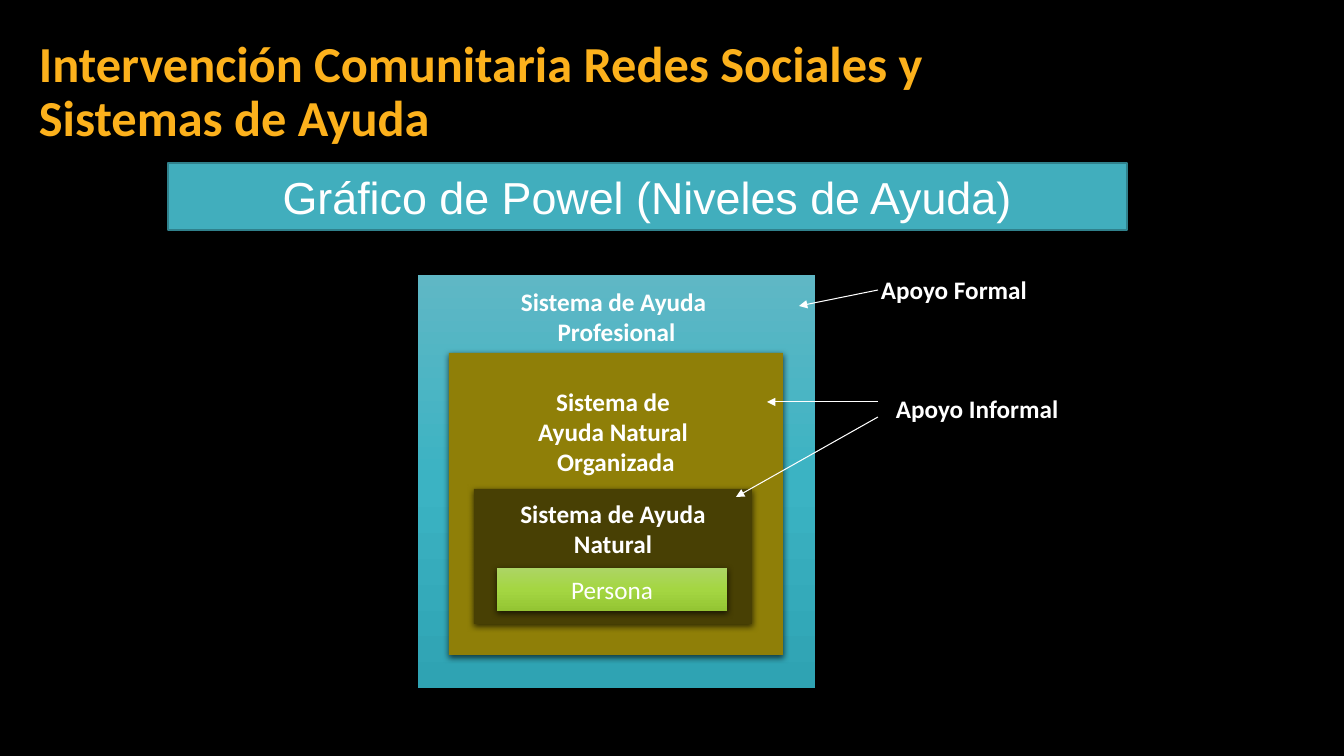
from copy import deepcopy

from lxml import etree
from pptx import Presentation, util as u
from pptx.dml.color import RGBColor
from pptx.enum import shapes, text
from pptx.oxml import ns

PX = 914400 / 100.8
COLORS = {
    "black": "000000", "white": "FFFFFF", "amber": "FCB11C",
    "teal": "41AEBD", "teal_edge": "30818C", "olive": "8F7F08", "dark_olive": "484004",
}
TEAL_GRADIENT = ["5FB7C5", "3BB3C3", "2FA3B3"]
GREEN_GRADIENT = ["ACD564", "A4D642", "94C533"]

# Content: boxes are left, top, width, height in px
TITLE = ("Intervención Comunitaria Redes Sociales y Sistemas de Ayuda", (29, 30, 1072, 126))
BANNER = ("Gráfico de Powel (Niveles de Ayuda)", (168, 163, 959, 67))
# Nested levels, outermost first: lines, box, fill, space above text, bold
LEVELS = [
    (["Sistema de Ayuda ", "Profesional"], (418, 275, 397, 413), TEAL_GRADIENT, 11, True),
    (["Sistema de ", "Ayuda Natural ", "Organizada"], (449, 353, 334, 302),
     COLORS["olive"], 33, True),
    (["Sistema de Ayuda", "Natural"], (474, 489, 278, 135), COLORS["dark_olive"], 9, True),
    (["Persona"], (497, 568, 230, 43), GREEN_GRADIENT, None, False),
]
LABELS = [("Apoyo Formal", (871, 269, 191, 40)), ("Apoyo Informal", (886, 388, 199, 40))]
ARROWS = [(878, 290, 799, 306), (878, 402, 767, 402), (878, 417, 736, 497)]


def px(*lengths):
    return [u.Emu(round(length * PX)) for length in lengths]


def rgb(value):
    return RGBColor.from_string(value)


def write(shape, lines, *, size=18, font="Calibri", color=COLORS["white"], bold=False,
          align=text.PP_ALIGN.LEFT, anchor=text.MSO_ANCHOR.MIDDLE, top=5, wrap=True,
          spacing=None):
    frame = shape.text_frame
    frame.word_wrap = wrap
    frame.vertical_anchor = anchor
    frame.margin_top, frame.margin_bottom = px(top, 5)
    for index, line in enumerate(lines):
        paragraph = frame.add_paragraph() if index else frame.paragraphs[0]
        paragraph.alignment = align
        if spacing:
            paragraph.line_spacing = spacing
        run = paragraph.add_run()
        run.text = line
        run.font.name, run.font.size, run.font.bold = font, u.Pt(size), bold
        run.font.color.rgb = rgb(color)


def paint(shape, fill):
    if isinstance(fill, str):
        shape.fill.solid()
        shape.fill.fore_color.rgb = rgb(fill)
        return
    shape.fill.gradient()
    shape.fill.gradient_angle = 270
    stops = shape._element.spPr.find(".//" + ns.qn("a:gsLst"))
    stops.append(deepcopy(stops[-1]))
    for index, (stop, color) in enumerate(zip(shape.fill.gradient_stops, fill)):
        stop.position = index / 2
        stop.color.rgb = rgb(color)


def add_rectangle(slide, box, fill):
    shape = slide.shapes.add_shape(shapes.MSO_SHAPE.RECTANGLE, *px(*box))
    shape.shadow.inherit = False
    paint(shape, fill)
    shape.line.fill.background()
    return shape


def add_shadow(shape):
    effects = shape._element.spPr.find(ns.qn("a:effectLst"))
    shadow = etree.SubElement(effects, ns.qn("a:outerShdw"), blurRad=str(u.Pt(4.5)),
                              dist=str(u.Pt(1.5)), dir="5400000", rotWithShape="0")
    color = etree.SubElement(shadow, ns.qn("a:srgbClr"), val=COLORS["black"])
    etree.SubElement(color, ns.qn("a:alpha"), val="63000")


def add_arrow(slide, ends):
    arrow = slide.shapes.add_connector(shapes.MSO_CONNECTOR.STRAIGHT, *px(*ends))
    arrow.line.color.rgb = rgb(COLORS["white"])
    arrow.line.width = u.Pt(0.75)
    etree.SubElement(arrow.line._get_or_add_ln(), ns.qn("a:tailEnd"), type="triangle")
    etree.SubElement(arrow._element.spPr, ns.qn("a:effectLst"))


def main():
    presentation = Presentation()
    presentation.slide_width, presentation.slide_height = px(1344, 756)
    slide = presentation.slides.add_slide(presentation.slide_layouts[6])
    slide.background.fill.solid()
    slide.background.fill.fore_color.rgb = rgb(COLORS["black"])
    center = text.PP_ALIGN.CENTER

    # Title and banner
    title, box = TITLE
    write(slide.shapes.add_textbox(*px(*box)), [title], size=36,
          color=COLORS["amber"], bold=True, spacing=0.9)
    heading, box = BANNER
    banner = add_rectangle(slide, box, COLORS["teal"])
    banner.line.color.rgb = rgb(COLORS["teal_edge"])
    banner.line.width = u.Pt(1)
    write(banner, [heading], size=32, font="Arial", align=center)

    # Nested levels of help
    for lines, box, fill, top, bold in LEVELS:
        level = add_rectangle(slide, box, fill)
        add_shadow(level)
        anchor = text.MSO_ANCHOR.TOP if top else text.MSO_ANCHOR.MIDDLE
        write(level, lines, bold=bold, align=center, anchor=anchor, top=top or 5, wrap=False)

    # Labels and arrows
    for label, box in LABELS:
        write(slide.shapes.add_textbox(*px(*box)), [label], bold=True)
    for ends in ARROWS:
        add_arrow(slide, ends)

    presentation.save("out.pptx")


if __name__ == "__main__":
    main()
